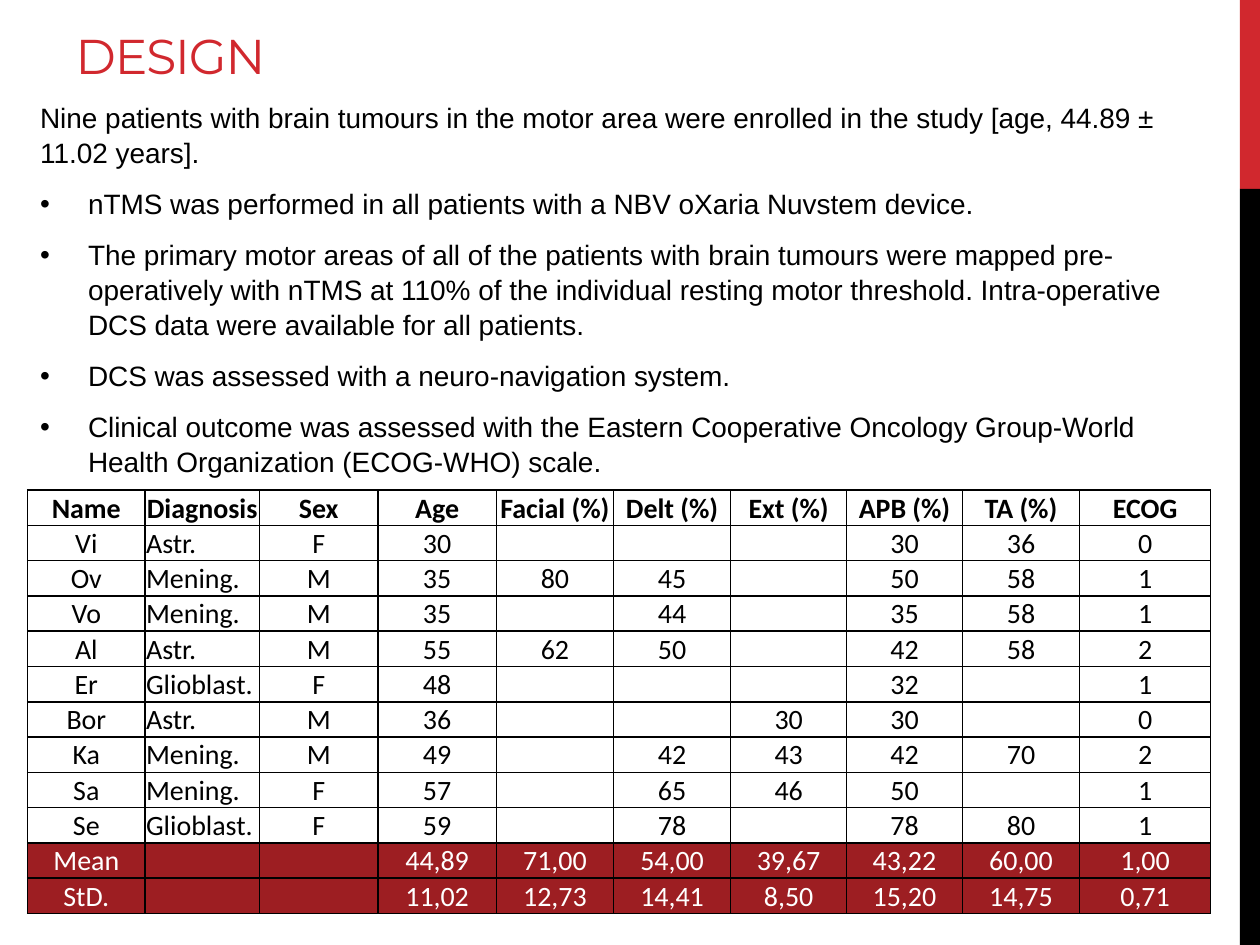
from dataclasses import dataclass

import pptx
import pptx.dml.color
import pptx.enum.shapes
import pptx.enum.text
import pptx.oxml.ns
import pptx.util
from lxml import etree

TITLE = "DESIGN"
INTRO = "Nine patients with brain tumours in the motor area were enrolled in the study [age, 44.89 ± 11.02 years]."
BULLETS = [
    "nTMS was performed in all patients with a NBV oXaria Nuvstem device.",
    "The primary motor areas of all of the patients with brain tumours were mapped pre-operatively "
    "with nTMS at 110% of the individual resting motor threshold. Intra-operative DCS data were "
    "available for all patients.",
    "DCS was assessed with a neuro-navigation system.",
    "Clinical outcome was assessed with the Eastern Cooperative Oncology Group-World Health "
    "Organization (ECOG-WHO) scale.",
]
HEADER = ["Name", "Diagnosis", "Sex", "Age", "Facial (%)", "Delt (%)", "Ext (%)", "APB (%)", "TA (%)", "ECOG"]
PATIENTS = [
    ["Vi", "Astr.", "F", "30", "", "", "", "30", "36", "0"],
    ["Ov", "Mening.", "M", "35", "80", "45", "", "50", "58", "1"],
    ["Vo", "Mening.", "M", "35", "", "44", "", "35", "58", "1"],
    ["Al", "Astr.", "M", "55", "62", "50", "", "42", "58", "2"],
    ["Er", "Glioblast.", "F", "48", "", "", "", "32", "", "1"],
    ["Bor", "Astr.", "M", "36", "", "", "30", "30", "", "0"],
    ["Ka", "Mening.", "M", "49", "", "42", "43", "42", "70", "2"],
    ["Sa", "Mening.", "F", "57", "", "65", "46", "50", "", "1"],
    ["Se", "Glioblast.", "F", "59", "", "78", "", "78", "80", "1"],
]
SUMMARY = [
    ["Mean", "", "", "44,89", "71,00", "54,00", "39,67", "43,22", "60,00", "1,00"],
    ["StD.", "", "", "11,02", "12,73", "14,41", "8,50", "15,20", "14,75", "0,71"],
]
COLUMN_WIDTHS = [0.93, 0.91, 0.94, 0.94, 0.93, 0.93, 0.92, 0.92, 0.93, 1.04]
DIAGNOSIS_COLUMN = HEADER.index("Diagnosis")


@dataclass(frozen=True)
class Theme:
    red: str = "D1282E"
    dark_red: str = "9D1E22"
    black: str = "000000"
    white: str = "FFFFFF"
    title_font: str = "Montserrat"
    body_font: str = "Arial"
    table_font: str = "Calibri"
    title_size: float = 27.9
    text_size: int = 16


THEME = Theme()
SLIDE_WIDTH, SLIDE_HEIGHT = 10, 7.5
BAND_WIDTH = 0.16
BAND_SPLIT = SLIDE_HEIGHT / 5
CONTENT_LEFT, CONTENT_WIDTH = 0.22, 9.38
TABLE_TOP, ROW_HEIGHT = 3.89, 0.28
BULLET_INDENT = 0.38

inches = pptx.util.Inches
points = pptx.util.Pt
align = pptx.enum.text.PP_ALIGN
anchor = pptx.enum.text.MSO_ANCHOR
qualified = pptx.oxml.ns.qn


def rgb(value):
    return pptx.dml.color.RGBColor.from_string(value)


def apply(target, values):
    for name, value in values.items():
        setattr(target, name, value)


def style_font(font, name, size, color, bold=False):
    apply(font, {"name": name, "size": points(size), "bold": bold})
    font.color.rgb = rgb(color)


def box(left, top, width, height):
    return dict(zip(("left", "top", "width", "height"), map(inches, (left, top, width, height))))


def add_band(slide, top, height, color):
    band = slide.shapes.add_shape(
        pptx.enum.shapes.MSO_SHAPE.RECTANGLE,
        **box(SLIDE_WIDTH - BAND_WIDTH, top, BAND_WIDTH, height))
    band.shadow.inherit = False
    band.fill.solid()
    band.fill.fore_color.rgb = rgb(color)
    band.line.fill.background()


def format_title(slide):
    title = slide.shapes.title
    apply(title, box(0.5, 0.19, 8.85, 0.53))
    frame = title.text_frame
    apply(frame, {"text": TITLE, "vertical_anchor": anchor.BOTTOM,
                  "auto_size": pptx.enum.text.MSO_AUTO_SIZE.NONE})
    paragraph = frame.paragraphs[0]
    paragraph.alignment = align.LEFT
    run = paragraph.runs[0]
    style_font(run.font, THEME.title_font, THEME.title_size, THEME.red)
    run.font._element.set("spc", "-60")


def add_body(slide):
    frame = slide.shapes.add_textbox(**box(CONTENT_LEFT, 0.74, CONTENT_WIDTH, 4.78)).text_frame
    frame.word_wrap = True
    for index, text in enumerate([INTRO, *BULLETS]):
        paragraph = frame.add_paragraph() if index else frame.paragraphs[0]
        apply(paragraph, {"space_before": points(THEME.text_size * 0.2), "space_after": points(6),
                          "line_spacing": 1.04, "alignment": align.LEFT})
        run = paragraph.add_run()
        run.text = text
        style_font(run.font, THEME.body_font, THEME.text_size, THEME.black)
        if index:
            properties = paragraph._p.get_or_add_pPr()
            properties.set("marL", str(inches(BULLET_INDENT)))
            properties.set("indent", str(-inches(BULLET_INDENT)))
            etree.SubElement(properties, qualified("a:buFont"), typeface=THEME.body_font)
            etree.SubElement(properties, qualified("a:buChar"), char="•")


def add_borders(cell):
    properties = cell._tc.get_or_add_tcPr()
    for side in ("lnL", "lnR", "lnT", "lnB"):
        line = etree.SubElement(properties, qualified(f"a:{side}"), w=str(points(1)))
        fill = etree.SubElement(line, qualified("a:solidFill"))
        etree.SubElement(fill, qualified("a:srgbClr"), val=THEME.black)


def fill_cell(cell, text, alignment, color, bold, fill):
    apply(cell, {"margin_left": inches(0.01), "margin_right": inches(0.01),
                 "margin_top": inches(0.01), "margin_bottom": 0,
                 "vertical_anchor": anchor.BOTTOM})
    add_borders(cell)
    if fill:
        cell.fill.solid()
        cell.fill.fore_color.rgb = rgb(fill)
    else:
        cell.fill.background()
    paragraph = cell.text_frame.paragraphs[0]
    paragraph.alignment = alignment
    if text:
        run = paragraph.add_run()
        run.text = text
        style_font(run.font, THEME.table_font, THEME.text_size, color, bold)
    else:
        etree.SubElement(paragraph._p, qualified("a:endParaRPr"), sz=str(THEME.text_size * 100))


def add_patient_table(slide):
    rows = [HEADER, *PATIENTS, *SUMMARY]
    first_summary = len(rows) - len(SUMMARY)
    table = slide.shapes.add_table(
        len(rows), len(HEADER),
        **box(CONTENT_LEFT, TABLE_TOP, sum(COLUMN_WIDTHS), ROW_HEIGHT * len(rows))).table
    apply(table, {"first_row": False, "horz_banding": False})
    for column, width in zip(table.columns, COLUMN_WIDTHS):
        column.width = inches(width)
    for row_index, row in enumerate(rows):
        table.rows[row_index].height = inches(ROW_HEIGHT)
        is_header, is_summary = row_index == 0, row_index >= first_summary
        for column_index, text in enumerate(row):
            is_diagnosis = column_index == DIAGNOSIS_COLUMN and not is_header
            fill_cell(table.cell(row_index, column_index), text,
                      align.LEFT if is_diagnosis else align.CENTER,
                      THEME.white if is_summary else THEME.black,
                      is_header,
                      THEME.dark_red if is_summary else None)


def main():
    presentation = pptx.Presentation()
    apply(presentation, {"slide_width": inches(SLIDE_WIDTH), "slide_height": inches(SLIDE_HEIGHT)})
    slide = presentation.slides.add_slide(presentation.slide_layouts.get_by_name("Title Only"))
    add_band(slide, 0, BAND_SPLIT, THEME.red)
    add_band(slide, BAND_SPLIT, SLIDE_HEIGHT - BAND_SPLIT, THEME.black)
    format_title(slide)
    add_body(slide)
    add_patient_table(slide)
    presentation.save("out.pptx")


if __name__ == "__main__":
    main()
